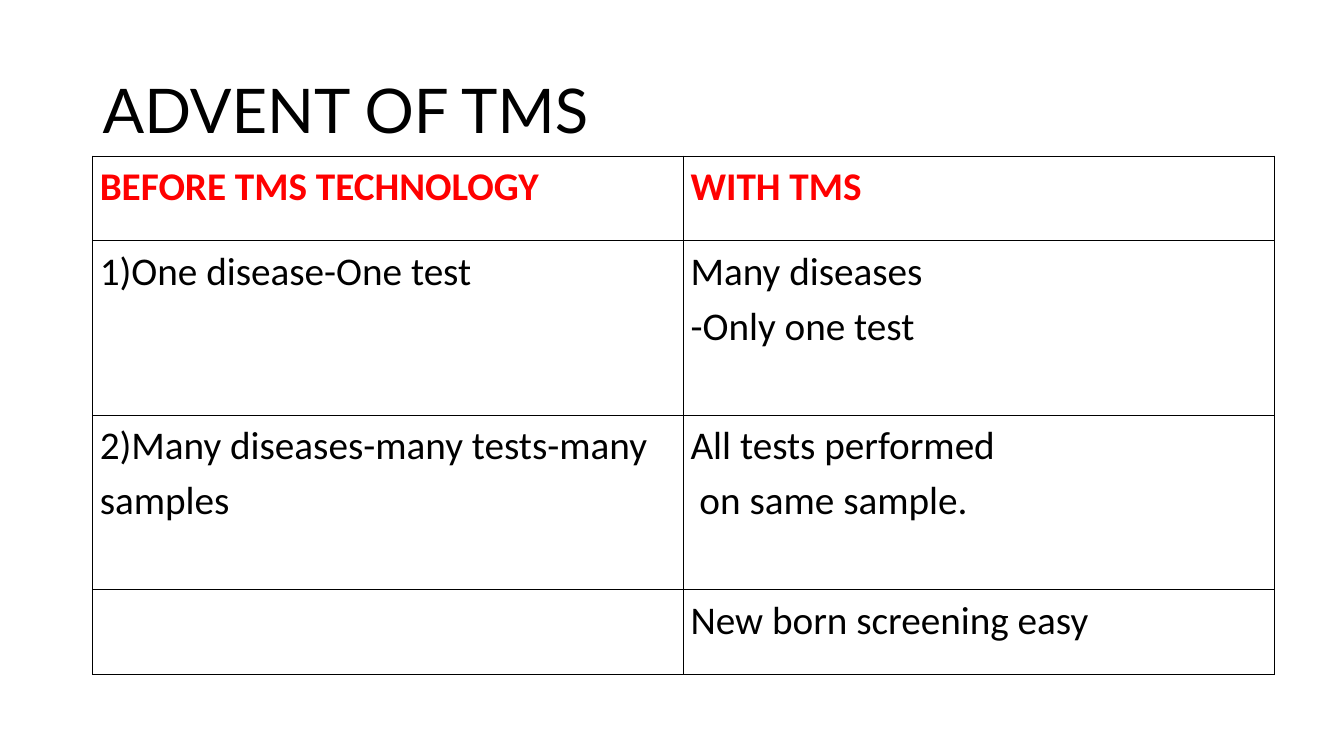
from lxml import etree
from pptx import Presentation
from pptx.dml.color import RGBColor
from pptx.enum.text import MSO_ANCHOR
from pptx.oxml.ns import qn
from pptx.util import Inches, Pt

MIDDLE = MSO_ANCHOR.MIDDLE
BLACK = "000000"
RED = "FF0000"
ROW_HEIGHTS = [0.84, 1.73, 1.73, 0.84]
COLUMN_WIDTH = 5.86
ROWS = [
    ("BEFORE TMS TECHNOLOGY", "WITH TMS"),
    ("1)One disease-One test", "Many diseases\n-Only one test"),
    ("2)Many diseases-many tests-many samples", "All tests performed\n on same sample."),
    ("", "New born screening easy"),
]


def rgb(color):
    return RGBColor.from_string(color)


def style_paragraph(p, font, size, color, spacing, bold=False):
    p.line_spacing = spacing
    p.font.name = font
    p.font.size = Pt(size)
    p.font.bold = bold
    p.font.color.rgb = rgb(color)


def add_title(slide, text):
    sp = slide.shapes.add_textbox(Inches(0.92), Inches(0.4), Inches(11.5), Inches(1.45))
    tf = sp.text_frame
    tf.word_wrap = True
    tf.vertical_anchor = MIDDLE
    tf.text = text
    style_paragraph(tf.paragraphs[0], "Lato", 44, BLACK, 0.9)


def add_borders(cell, color, width):
    tc_pr = cell._tc.get_or_add_tcPr()
    for position, side in enumerate(("lnL", "lnR", "lnT", "lnB")):
        ln = etree.Element(qn(f"a:{side}"), w=str(Pt(width)))
        fill = etree.SubElement(ln, qn("a:solidFill"))
        etree.SubElement(fill, qn("a:srgbClr"), val=color)
        tc_pr.insert(position, ln)


def fill_cell(cell, text, color, bold):
    cell.margin_left = cell.margin_right = Inches(0.07)
    cell.margin_top = cell.margin_bottom = 0
    cell.fill.background()
    add_borders(cell, BLACK, 1)
    cell.text = text
    for p in cell.text_frame.paragraphs:
        style_paragraph(p, "Calibri", 28, color, 1.15, bold)


def add_comparison_table(slide):
    frame = slide.shapes.add_table(len(ROWS), 2, Inches(0.92), Inches(1.55),
                                   Inches(2 * COLUMN_WIDTH), Inches(sum(ROW_HEIGHTS)))
    table = frame.table
    table.first_row = False
    table.horz_banding = False
    for column in table.columns:
        column.width = Inches(COLUMN_WIDTH)
    for i, (height, texts) in enumerate(zip(ROW_HEIGHTS, ROWS)):
        table.rows[i].height = Inches(height)
        header = i == 0
        for j, text in enumerate(texts):
            fill_cell(table.cell(i, j), text, RED if header else BLACK, header)


def main():
    prs = Presentation()
    prs.slide_width = Inches(13.33)
    prs.slide_height = Inches(7.5)
    slide = prs.slides.add_slide(prs.slide_layouts[6])
    add_title(slide, "ADVENT OF TMS")
    add_comparison_table(slide)
    prs.save("out.pptx")


if __name__ == "__main__":
    main()
